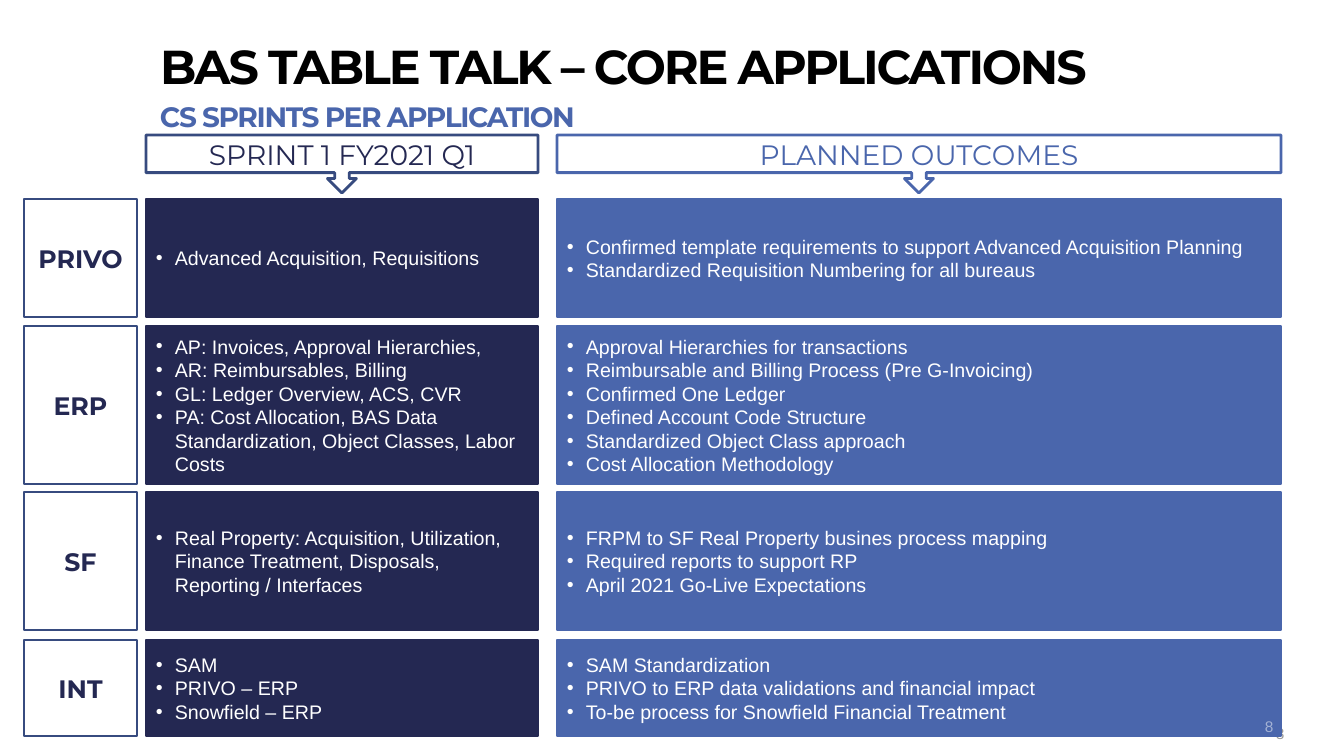
from lxml import etree
from pptx import Presentation
from pptx.dml.color import RGBColor
from pptx.enum.shapes import MSO_SHAPE
from pptx.enum.text import MSO_ANCHOR, PP_ALIGN
from pptx.oxml.ns import qn
from pptx.util import Emu, Pt

RECTANGLE = MSO_SHAPE.RECTANGLE
ARROW_CALLOUT = MSO_SHAPE.DOWN_ARROW_CALLOUT
MIDDLE = MSO_ANCHOR.MIDDLE
LEFT, CENTER = PP_ALIGN.LEFT, PP_ALIGN.CENTER

EMU_PER_PX = 914400 / 100.8
HEADING_FONT, BODY_FONT = "Montserrat", "Arial"
COLORS = {
    "black": "000000",
    "white": "FFFFFF",
    "navy": "242852",
    "blue": "4A66AC",
    "edge": "374B7F",
}

LABEL_COLUMN = (24, 113)
SPRINT_COLUMN = (146, 392)
OUTCOME_COLUMN = (557, 724)
HEADER_TOP, HEADER_HEIGHT = 135, 58
BULLET_INDENT = 19

APPLICATIONS = [
    ("PRIVO", 199, 118,
     ["Advanced Acquisition, Requisitions"],
     ["Confirmed template requirements to support Advanced Acquisition Planning",
      "Standardized Requisition Numbering for all bureaus"]),
    ("ERP", 326, 158,
     ["AP: Invoices, Approval Hierarchies,",
      "AR: Reimbursables, Billing",
      "GL: Ledger Overview, ACS, CVR",
      "PA: Cost Allocation, BAS Data Standardization, Object Classes, Labor Costs"],
     ["Approval Hierarchies for transactions",
      "Reimbursable and Billing Process (Pre G-Invoicing)",
      "Confirmed One Ledger",
      "Defined Account Code Structure",
      "Standardized Object Class approach",
      "Cost Allocation Methodology"]),
    ("SF", 492, 138,
     ["Real Property: Acquisition, Utilization, Finance Treatment, Disposals, "
      "Reporting / Interfaces"],
     ["FRPM to SF Real Property busines process mapping",
      "Required reports to support RP",
      "April 2021 Go-Live Expectations"]),
    ("INT", 640, 96,
     ["SAM", "PRIVO – ERP", "Snowfield – ERP"],
     ["SAM Standardization",
      "PRIVO to ERP data validations and financial impact",
      "To-be process for Snowfield Financial Treatment"]),
]


def px(length):
    return Emu(round(length * EMU_PER_PX))


def rgb(color):
    return RGBColor.from_string(COLORS[color])


def style(paragraph, font_name, size, color, bold=False):
    font = paragraph.font
    font.name = font_name
    font.size = Pt(size)
    font.bold = bold
    font.color.rgb = rgb(color)
    return paragraph._p.pPr.find(qn("a:defRPr"))


def add_heading(slide, text, box, size, color, line_spacing, tracking, top_inset=0):
    frame = slide.shapes.add_textbox(*map(px, box)).text_frame
    frame.word_wrap = True
    frame.margin_left = frame.margin_right = frame.margin_bottom = 0
    frame.margin_top = px(top_inset)
    paragraph = frame.paragraphs[0]
    paragraph.text = text
    paragraph.line_spacing = line_spacing
    style(paragraph, HEADING_FONT, size, color, True).set("spc", str(tracking))


def add_page_number(slide, box, color, opacity):
    frame = slide.shapes.add_textbox(*map(px, box)).text_frame
    frame.word_wrap = True
    paragraph = frame.paragraphs[0]
    paragraph.text = "8"
    properties = style(paragraph, BODY_FONT, 11, color)
    shade = properties.find(".//" + qn("a:srgbClr"))
    etree.SubElement(shade, qn("a:alpha"), val=str(opacity * 1000))


def add_panel(slide, preset, column, top, height, fill, line):
    left, width = column
    panel = slide.shapes.add_shape(preset, *map(px, (left, top, width, height)))
    panel.shadow.inherit = False
    if fill:
        panel.fill.solid()
        panel.fill.fore_color.rgb = rgb(fill)
    else:
        panel.fill.background()
    panel.line.color.rgb = rgb(line)
    panel.line.width = Pt(2)
    frame = panel.text_frame
    frame.word_wrap = True
    frame.vertical_anchor = MIDDLE
    return frame


def add_label(frame, text, size, color, bold=False):
    paragraph = frame.paragraphs[0]
    paragraph.text = text
    paragraph.alignment = CENTER
    style(paragraph, HEADING_FONT, size, color, bold)


def add_bullets(frame, items):
    frame.text = "\n".join(items)
    for paragraph in frame.paragraphs:
        paragraph.alignment = LEFT
        properties = paragraph._p.get_or_add_pPr()
        properties.set("marL", str(px(BULLET_INDENT)))
        properties.set("indent", str(-px(BULLET_INDENT)))
        etree.SubElement(properties, qn("a:buFont"), typeface=BODY_FONT)
        etree.SubElement(properties, qn("a:buChar"), char="•")
        style(paragraph, BODY_FONT, 14, "white")


def main():
    presentation = Presentation()
    presentation.slide_width = px(1344)
    presentation.slide_height = px(756)
    slide = presentation.slides.add_slide(presentation.slide_layouts[6])

    add_page_number(slide, (1266, 719, 42, 23), "black", 40)
    add_heading(slide, "BAS TABLE TALK – CORE APPLICATIONS", (160, 41, 1032, 54),
                34, "black", 0.8, -150, 7)
    add_heading(slide, "CS SPRINTS PER APPLICATION", (160, 96, 763, 56),
                20, "blue", 1.1, -100)

    for text, column, line, color in (
        ("SPRINT 1 FY2021 Q1", SPRINT_COLUMN, "edge", "navy"),
        ("PLANNED OUTCOMES", OUTCOME_COLUMN, "blue", "blue"),
    ):
        header = add_panel(slide, ARROW_CALLOUT, column, HEADER_TOP, HEADER_HEIGHT, None, line)
        add_label(header, text, 20, color)

    for name, top, height, sprint, outcomes in APPLICATIONS:
        label = add_panel(slide, RECTANGLE, LABEL_COLUMN, top, height, "white", "edge")
        add_label(label, name, 18, "navy", True)
        for column, color, items in (
            (SPRINT_COLUMN, "navy", sprint),
            (OUTCOME_COLUMN, "blue", outcomes),
        ):
            add_bullets(add_panel(slide, RECTANGLE, column, top, height, color, color), items)

    add_page_number(slide, (1255, 712, 54, 34), "white", 50)
    presentation.save("out.pptx")


if __name__ == "__main__":
    main()
